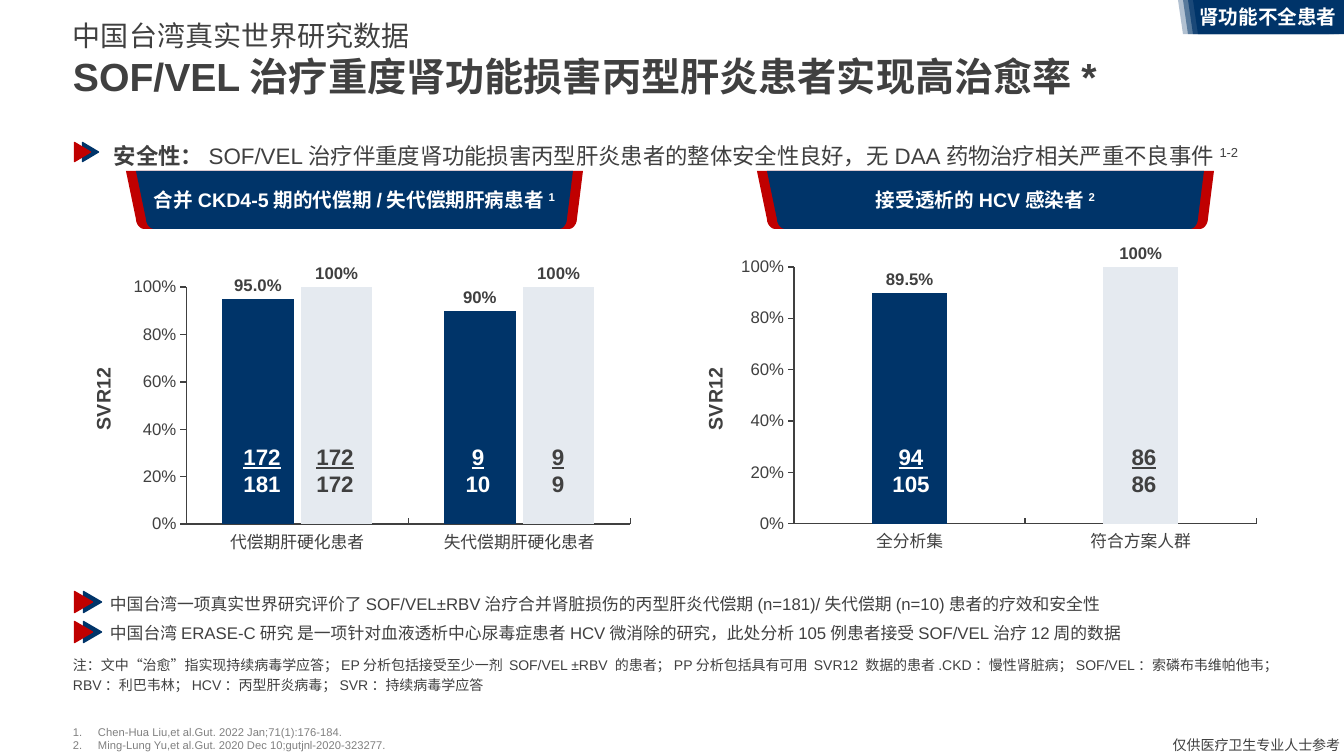
import pptx
import pptx.util
import pptx.chart.data
import pptx.dml.color
import pptx.enum.chart
import pptx.enum.shapes
import pptx.enum.text
import pptx.oxml
import pptx.oxml.ns
from dataclasses import dataclass


@dataclass(frozen=True)
class Theme:
    navy: str = "003469"
    red: str = "C00000"
    pale: str = "E5EAF0"
    ink: str = "404040"
    grey: str = "808080"
    white: str = "FFFFFF"
    latin: str = "Arial"
    asian: str = "Noto Sans CJK SC"
    title: int = 28
    subtitle: int = 20
    lead: int = 16
    heading: int = 14
    body: int = 12
    note: int = 10
    reference: int = 8


THEME = Theme()
BOLD = {"bold": True}
SUPER = {"raised": True}

TITLE = [("中国台湾真实世界研究数据\n", {"size": THEME.subtitle}),
         ("SOF/VEL治疗重度肾功能损害丙型肝炎患者实现高治愈率*", BOLD)]
TAG = [("肾功能不全患者", BOLD)]
SAFETY = [("安全性：", BOLD),
          ("SOF/VEL治疗伴重度肾功能损害丙型肝炎患者的整体安全性良好，无DAA药物治疗相关严重不良事件", {}),
          ("1-2", SUPER)]
STUDIES = ["中国台湾一项真实世界研究评价了SOF/VEL±RBV治疗合并肾脏损伤的丙型肝炎代偿期(n=181)/失代偿期(n=10)患者的疗效和安全性",
           "中国台湾ERASE-C研究 是一项针对血液透析中心尿毒症患者HCV微消除的研究，此处分析105例患者接受SOF/VEL治疗12周的数据"]
NOTE = "注：文中“治愈”指实现持续病毒学应答；EP分析包括接受至少一剂 SOF/VEL ±RBV 的患者；PP分析包括具有可用 SVR12 数据的患者.CKD：慢性肾脏病；SOF/VEL：索磷布韦维帕他韦；RBV：利巴韦林；HCV：丙型肝炎病毒；SVR：持续病毒学应答"
REFERENCES = ["Chen-Hua Liu,et al.Gut. 2022 Jan;71(1):176-184.",
              "Ming-Lung Yu,et al.Gut. 2020 Dec 10;gutjnl-2020-323277."]
AUDIENCE = "仅供医疗卫生专业人士参考"

PANELS = [
    {"heading": "合并CKD4-5期的代偿期/失代偿期肝病患者", "cite": "1", "banner": 126, "axis_title": 103,
     "frame": (120, 235, 511, 325), "plot": (0.13, 0.16, 0.87, 0.73), "gap": 100,
     "first_label": "0.0%", "categories": ["代偿期肝硬化患者", "失代偿期肝硬化患者"],
     "series": [("EP分析", [0.95, 0.9], [THEME.navy, THEME.navy]),
                ("PP分析", [1, 1], [THEME.pale, THEME.pale])],
     "fractions": [(262, "172", "181", THEME.white), (335, "172", "172", THEME.ink),
                   (478, "9", "10", THEME.white), (558, "9", "9", THEME.ink)]},
    {"heading": "接受透析的HCV感染者", "cite": "2", "banner": 757, "axis_title": 715,
     "frame": (725, 223, 532, 338), "plot": (0.13, 0.13, 0.87, 0.76), "gap": 210,
     "first_label": '"89.5%"', "categories": ["全分析集", "符合方案人群"],
     "series": [("SVR12", [0.9, 1], [THEME.navy, THEME.pale])],
     "fractions": [(911, "94", "105", THEME.white), (1144, "86", "86", THEME.ink)]},
]
MARKERS = [(81, 144, 19, 16, 8), (82, 593, 21, 18, 9), (82, 623, 21, 18, 9)]

ALIGN = pptx.enum.text.PP_ALIGN
ANCHOR = pptx.enum.text.MSO_ANCHOR
CHART = pptx.enum.chart


def px(value):
    return pptx.util.Emu(round(value * 914400 / 100.8))


def rgb(code):
    return pptx.dml.color.RGBColor.from_string(code)


def element(tag, **attributes):
    node = pptx.oxml.parse_xml(f"<{tag} {pptx.oxml.ns.nsdecls(tag.split(':')[0])}/>")
    for name, value in attributes.items():
        node.set(name, str(value))
    return node


def write_span(para, text, size, color, bold=False, underline=False, raised=False):
    span = para.add_run()
    span.text = text.rstrip("\n")
    font = span.font
    font.size, font.name, font.bold, font.underline = pptx.util.Pt(size), THEME.latin, bold, underline
    font.color.rgb = rgb(color)
    props = span._r.get_or_add_rPr()
    props.append(element("a:ea", typeface=THEME.asian))
    if raised:
        props.set("baseline", "30000")
    if text.endswith("\n"):
        para.add_line_break()


def write(frame, paragraphs, size, color=THEME.ink, align=ALIGN.LEFT, anchor=ANCHOR.TOP,
          insets=(10, 5, 10, 5), spacing=None, after=None, numbered=False):
    frame.word_wrap, frame.vertical_anchor = True, anchor
    frame.margin_left, frame.margin_top, frame.margin_right, frame.margin_bottom = map(px, insets)
    for index, runs in enumerate(paragraphs):
        para = frame.paragraphs[0] if index == 0 else frame.add_paragraph()
        if numbered:
            props = para._p.get_or_add_pPr()
            props.set("marL", str(px(25)))
            props.set("indent", str(-px(25)))
            props.append(element("a:buFont", typeface=THEME.latin))
            props.append(element("a:buAutoNum", type="arabicPeriod"))
        para.alignment, para.line_spacing = align, spacing
        if after:
            para.space_after = pptx.util.Pt(after)
        for text, style in runs:
            write_span(para, text, **{"size": size, "color": color, **style})


def add_text(page, area, paragraphs, size, **options):
    box = page.shapes.add_textbox(*map(px, area))
    write(box.text_frame, paragraphs, size, **options)
    return box


def paint(shape, color, outlined=False):
    shape.shadow.inherit = False
    shape.fill.solid()
    shape.fill.fore_color.rgb = rgb(color)
    if outlined:
        shape.line.color.rgb = rgb(color)
        shape.line.width = pptx.util.Pt(1)
    else:
        shape.line.fill.background()


def add_outline(page, points, color):
    points = [(px(x), px(y)) for x, y in points]
    builder = page.shapes.build_freeform(*points[0], scale=1.0)
    builder.add_line_segments(points[1:], close=True)
    shape = builder.convert_to_shape()
    paint(shape, color)
    return shape


def curve(start, first, second, end, steps=6):
    weights = [((1 - t) ** 3, 3 * t * (1 - t) ** 2, 3 * t * t * (1 - t), t ** 3)
               for t in (step / steps for step in range(steps + 1))]
    return [tuple(sum(w * p[axis] for w, p in zip(weight, (start, first, second, end)))
                  for axis in (0, 1)) for weight in weights]


def add_banner(page, left, width, color, top=171, bottom=229):
    right = left + width
    points = [(left, top), (right, top)]
    points += curve((right - 6, bottom - 10), (right - 6, bottom - 5), (right - 10, bottom), (right - 14, bottom))
    points += curve((left + 18, bottom), (left + 14, bottom), (left + 10, bottom - 5), (left + 10, bottom - 10))
    return add_outline(page, points, color)


def add_tag(page):
    for step, opacity in enumerate((30, 50, 70, 100)):
        left = 1178 + 5 * step
        sheet = add_outline(page, [(left, 0), (left + 151, 0), (left + 151, 34), (left + 5, 34)], THEME.navy)
        if opacity < 100:
            color = sheet._element.spPr.find(".//" + pptx.oxml.ns.qn("a:srgbClr"))
            color.append(element("a:alpha", val=opacity * 1000))
    add_text(page, (1196, 5, 144, 24), [TAG], THEME.heading, color=THEME.white,
             align=ALIGN.CENTER, anchor=ANCHOR.MIDDLE, insets=(0, 0, 0, 0))


def add_marker(page, left, top, width, height, step):
    for x, color in ((left, THEME.navy), (left - step, THEME.red)):
        arrow = page.shapes.add_shape(pptx.enum.shapes.MSO_SHAPE.ISOSCELES_TRIANGLE,
                                      *map(px, (x, top, width, height)))
        arrow.rotation = 90
        paint(arrow, color, outlined=True)


def style_font(font, bold=False):
    font.size, font.name, font.bold = pptx.util.Pt(THEME.body), THEME.latin, bold
    font.color.rgb = rgb(THEME.ink)


def style_axis(axis, tick):
    axis.has_major_gridlines = False
    axis.major_tick_mark, axis.minor_tick_mark = tick, CHART.XL_TICK_MARK.NONE
    axis.format.line.color.rgb = rgb(THEME.ink)
    axis.format.line.width = pptx.util.Pt(1)
    style_font(axis.tick_labels.font)


def place_plot(chart, ratios):
    area = chart._chartSpace.chart.plotArea
    for old in area.findall(pptx.oxml.ns.qn("c:layout")):
        area.remove(old)
    layout, manual = element("c:layout"), element("c:manualLayout")
    settings = [("layoutTarget", "inner"), ("xMode", "edge"), ("yMode", "edge"), *zip("xywh", ratios)]
    for name, value in settings:
        manual.append(element("c:" + name, val=value))
    layout.append(manual)
    area.insert(0, layout)


def add_rate_chart(page, panel):
    data = pptx.chart.data.CategoryChartData(number_format="0%")
    data.categories = panel["categories"]
    for name, values, _ in panel["series"]:
        data.add_series(name, values)
    chart = page.shapes.add_chart(CHART.XL_CHART_TYPE.COLUMN_CLUSTERED,
                                  *map(px, panel["frame"]), data).chart
    chart.has_legend = chart.has_title = False
    style_font(chart.font)
    style_axis(chart.category_axis, CHART.XL_TICK_MARK.INSIDE)
    rates = chart.value_axis
    style_axis(rates, CHART.XL_TICK_MARK.OUTSIDE)
    rates.minimum_scale, rates.maximum_scale, rates.major_unit = 0, 1, 0.2
    rates.tick_labels.number_format, rates.tick_labels.number_format_is_linked = "0%", False
    plot = chart.plots[0]
    plot.gap_width, plot.overlap, plot.vary_by_categories = panel["gap"], -10, False
    for series, (_, values, colors) in zip(plot.series, panel["series"]):
        series.format.fill.solid()
        series.format.fill.fore_color.rgb = rgb(colors[0])
        labels = series.data_labels
        labels.show_value, labels.position = True, CHART.XL_LABEL_POSITION.OUTSIDE_END
        labels.number_format, labels.number_format_is_linked = "0%", False
        style_font(labels.font, bold=True)
        for index, color in enumerate(colors):
            fill = series.points[index].format.fill
            fill.solid()
            fill.fore_color.rgb = rgb(color)
        if values[0] < 1:
            label = series.points[0].data_label
            style_font(label.font, bold=True)
            label.position = CHART.XL_LABEL_POSITION.OUTSIDE_END
            series._element.xpath(".//c:dLbl")[0].insert(
                1, element("c:numFmt", formatCode=panel["first_label"], sourceLinked=0))
    place_plot(chart, panel["plot"])


def add_panel(page, panel):
    add_banner(page, panel["banner"], 457, THEME.red)
    front = add_banner(page, panel["banner"] + 10, 437, THEME.navy)
    write(front.text_frame, [[(panel["heading"], BOLD), (panel["cite"], {**BOLD, **SUPER})]], THEME.heading,
          color=THEME.white, align=ALIGN.CENTER, anchor=ANCHOR.MIDDLE)
    add_rate_chart(page, panel)
    axis_title = add_text(page, (panel["axis_title"] - 70, 382, 140, 34), [[("SVR12", BOLD)]],
                          THEME.heading, align=ALIGN.CENTER)
    axis_title.rotation = 270
    for center, cured, treated, color in panel["fractions"]:
        add_text(page, (center - 50, 438, 100, 65),
                 [[(cured, {**BOLD, "underline": True})], [(treated, BOLD)]],
                 THEME.lead, color=color, align=ALIGN.CENTER)


def main():
    deck = pptx.Presentation()
    deck.slide_width, deck.slide_height = px(1344), px(756)
    page = deck.slides.add_slide(deck.slide_layouts[6])
    add_text(page, (1142, 732, 202, 24), [[(AUDIENCE, {})]], THEME.note, align=ALIGN.RIGHT, insets=(0, 5, 4, 0))
    add_text(page, (73, 694, 1086, 62), [[(line, {})] for line in REFERENCES], THEME.reference,
             color=THEME.grey, anchor=ANCHOR.BOTTOM, insets=(0, 0, 0, 4), numbered=True)
    add_text(page, (73, 1, 1199, 116), [TITLE], THEME.title, anchor=ANCHOR.MIDDLE,
             insets=(0, 0, 0, 0), spacing=1.0)
    add_tag(page)
    add_text(page, (104, 125, 1163, 56), [SAFETY], THEME.lead, anchor=ANCHOR.MIDDLE, spacing=1.2)
    for panel in PANELS:
        add_panel(page, panel)
    add_text(page, (100, 585, 1202, 61), [[(line, {})] for line in STUDIES], THEME.body, spacing=1.2, after=3)
    for marker in MARKERS:
        add_marker(page, *marker)
    add_text(page, (73, 653, 1236, 40), [[(NOTE, {})]], THEME.note, anchor=ANCHOR.MIDDLE,
             insets=(0, 0, 0, 0), spacing=1.2)
    deck.save("out.pptx")


if __name__ == "__main__":
    main()
